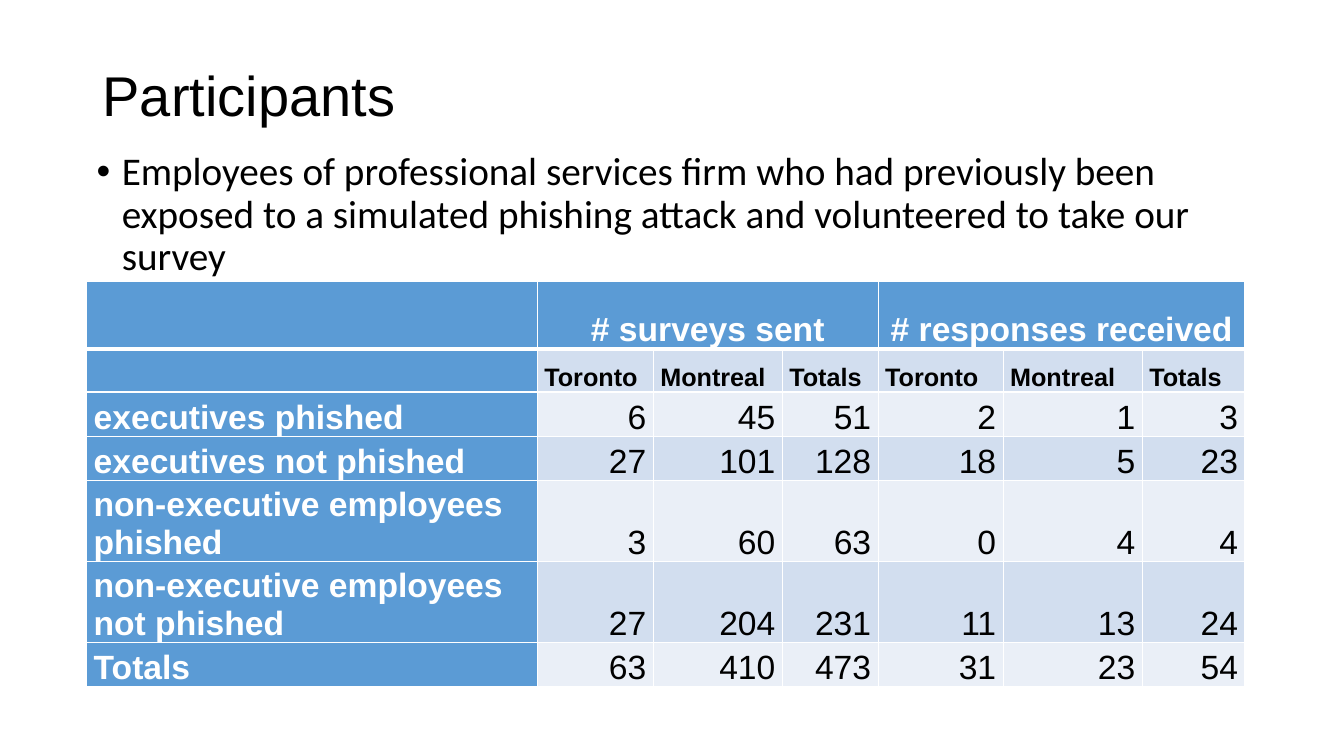
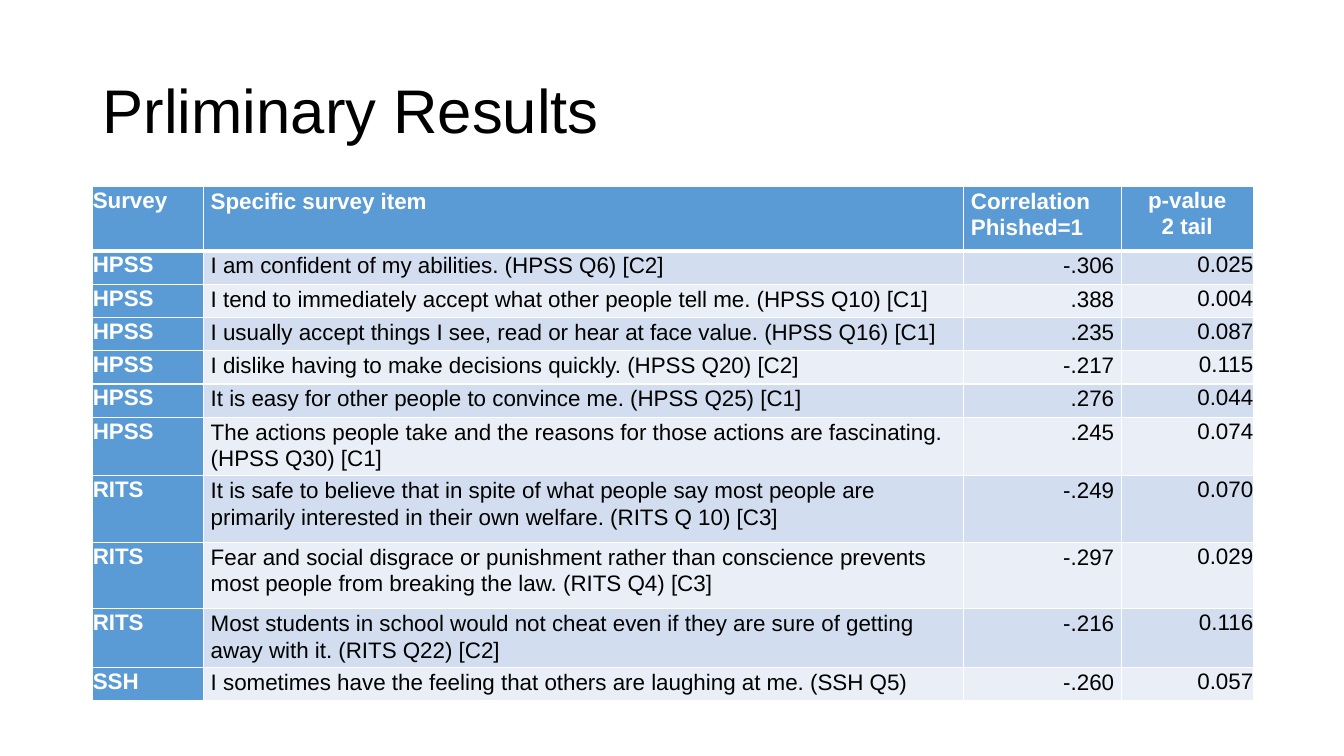
import copy
from dataclasses import dataclass
from typing import Optional

import pptx
import pptx.dml.color
import pptx.enum.text
import pptx.oxml
import pptx.oxml.ns
import pptx.util

Inches = pptx.util.Inches
Pt = pptx.util.Pt
ALIGN = pptx.enum.text.PP_ALIGN
ANCHOR = pptx.enum.text.MSO_ANCHOR


@dataclass(frozen=True)
class Theme:
    accent: str = "5B9BD5"
    band_dark: str = "D2DEEF"
    band_light: str = "EAEFF7"
    text: str = "000000"
    inverse: str = "FFFFFF"
    font: str = "Arial"
    body_font: str = "Calibri"
    body_size: int = 28
    border: int = 1
    header_border: int = 3


THEME = Theme()


@dataclass(frozen=True)
class Box:
    left: float
    top: float
    width: float
    height: float

    def lengths(self) -> tuple:
        return tuple(Inches(v) for v in (self.left, self.top, self.width, self.height))


@dataclass(frozen=True)
class TextStyle:
    size: int
    color: str = THEME.text
    bold: bool = False
    font: str = THEME.font
    align: Optional[ALIGN] = None
    spacing: Optional[float] = None
    before: Optional[int] = None
    after: Optional[int] = None


@dataclass(frozen=True)
class Column:
    width: float
    align: Optional[ALIGN] = ALIGN.RIGHT
    header_align: Optional[ALIGN] = None
    side_inset: float = 0.07
    top_inset: float = 0


@dataclass(frozen=True)
class TableStyle:
    size: int
    anchor: ANCHOR
    spacing: Optional[float] = None
    after: Optional[int] = None
    subheader_size: Optional[int] = None
    header_span: int = 1


def style_paragraph(p, text: str, style: TextStyle) -> None:
    p.text = text
    p.alignment = style.align
    p.line_spacing = style.spacing
    if style.before is not None:
        p.space_before = Pt(style.before)
    if style.after is not None:
        p.space_after = Pt(style.after)
    for r in p.runs:
        r.font.name = style.font
        r.font.size = Pt(style.size)
        r.font.bold = style.bold
        r.font.color.rgb = pptx.dml.color.RGBColor.from_string(style.color)
    for br in p._p.findall(pptx.oxml.ns.qn("a:br")):
        br.append(copy.deepcopy(p.runs[0]._r.rPr))


def add_text(slide, box: Box, text: str, style: TextStyle, anchor=ANCHOR.TOP):
    tf = slide.shapes.add_textbox(*box.lengths()).text_frame
    tf.word_wrap = True
    tf.vertical_anchor = anchor
    style_paragraph(tf.paragraphs[0], text, style)
    return tf.paragraphs[0]


def add_title(slide, text: str, height: float, size: int, spacing=None) -> None:
    style = TextStyle(size, spacing=spacing)
    add_text(slide, Box(0.92, 0.4, 11.5, height), text, style, ANCHOR.MIDDLE)


def add_bullet(slide, box: Box, text: str) -> None:
    style = TextStyle(THEME.body_size, font=THEME.body_font, spacing=0.9, before=10)
    pPr = add_text(slide, box, text, style)._p.get_or_add_pPr()
    pPr.set("marL", str(Inches(0.25)))
    pPr.set("indent", str(-Inches(0.25)))
    ns = pptx.oxml.ns.nsdecls("a")
    pPr.append(pptx.oxml.parse_xml(f'<a:buFont {ns} typeface="Arial"/>'))
    pPr.append(pptx.oxml.parse_xml(f'<a:buChar {ns} char="•"/>'))


def set_borders(cell, top: int, bottom: int) -> None:
    """Draw the cell's borders; call before filling, as the XML order matters."""
    tcPr = cell._tc.get_or_add_tcPr()
    widths = {"lnL": THEME.border, "lnR": THEME.border, "lnT": top, "lnB": bottom}
    for tag, width in widths.items():
        tcPr.append(pptx.oxml.parse_xml(
            f'<a:{tag} {pptx.oxml.ns.nsdecls("a")} w="{Pt(width)}"><a:solidFill>'
            f'<a:srgbClr val="{THEME.inverse}"/></a:solidFill></a:{tag}>'))


def cell_fill(row: int, col: int) -> str:
    if row == 0 or col == 0:
        return THEME.accent
    return THEME.band_dark if row % 2 else THEME.band_light


def cell_text_style(row: int, col: int, column: Column, style: TableStyle) -> TextStyle:
    subheader = row == 1 and style.subheader_size is not None
    size, align = style.size, column.align
    if row == 0:
        align = column.header_align
    elif subheader:
        size, align = style.subheader_size, None
    return TextStyle(
        size, THEME.inverse if row == 0 or col == 0 else THEME.text,
        bold=row == 0 or col == 0 or subheader, align=align,
        spacing=style.spacing, after=style.after)


def add_data_table(slide, box: Box, columns: list[Column], heights: list[float],
                   rows: list[tuple], style: TableStyle) -> None:
    table = slide.shapes.add_table(len(rows), len(columns), *box.lengths()).table
    table.first_row = table.horz_banding = False
    for c, column in enumerate(columns):
        table.columns[c].width = Inches(column.width)
    for r, (height, texts) in enumerate(zip(heights, rows)):
        table.rows[r].height = Inches(height)
        for c, (column, text) in enumerate(zip(columns, texts)):
            cell = table.cell(r, c)
            set_borders(cell, THEME.header_border if r == 1 else THEME.border,
                        THEME.header_border if r == 0 else THEME.border)
            cell.fill.solid()
            cell.fill.fore_color.rgb = pptx.dml.color.RGBColor.from_string(cell_fill(r, c))
            cell.margin_left = cell.margin_right = Inches(column.side_inset)
            cell.margin_top, cell.margin_bottom = Inches(column.top_inset), 0
            cell.vertical_anchor = style.anchor
            if text:
                style_paragraph(cell.text_frame.paragraphs[0], text,
                                cell_text_style(r, c, column, style))
    if style.header_span > 1:
        for c in range(1, len(columns), style.header_span):
            table.cell(0, c).merge(table.cell(0, c + style.header_span - 1))


def build_participants(slide) -> None:
    add_title(slide, "Participants", 1.06, 40)
    places = ("Toronto", "Montreal", "Totals")
    rows = [
        ("", "# surveys sent", "", "", "# responses received", "", ""),
        ("", *places, *places),
        ("executives phished", "6", "45", "51", "2", "1", "3"),
        ("executives not phished", "27", "101", "128", "18", "5", "23"),
        ("non-executive employees phished", "3", "60", "63", "0", "4", "4"),
        ("non-executive employees not phished", "27", "204", "231", "11", "13", "24"),
        ("Totals", "63", "410", "473", "31", "23", "54"),
    ]
    columns = [Column(4.47, align=None)] + [
        Column(w, header_align=ALIGN.CENTER) for w in (1.15, 1.28, 0.95, 1.24, 1.38, 1.02)]
    add_data_table(slide, Box(0.86, 2.79, 11.5, 4.03), columns,
                   [0.67, 0.43, 0.44, 0.44, 0.67, 0.67, 0.44], rows,
                   TableStyle(24, ANCHOR.BOTTOM, subheader_size=18, header_span=3))
    add_bullet(slide, Box(0.86, 1.46, 11.5, 4.76),
               "Employees of professional services firm who had previously been exposed "
               "to a simulated phishing attack and volunteered to take our survey")


def build_results(slide) -> None:
    add_title(slide, "Prliminary Results", 1.45, 44, spacing=0.9)
    rows = [
        ("Survey", "Specific survey item", "Correlation\nPhished=1", "p-value\n2 tail"),
        ("HPSS", "I am confident of my abilities. (HPSS Q6) [C2]", "-.306", "0.025"),
        ("HPSS", "I tend to immediately accept what other people tell me. (HPSS Q10) [C1]",
         ".388", "0.004"),
        ("HPSS", "I usually accept things I see, read or hear at face value. (HPSS Q16) [C1]",
         ".235", "0.087"),
        ("HPSS", "I dislike having to make decisions quickly. (HPSS Q20) [C2]",
         "-.217", "0.115"),
        ("HPSS", "It is easy for other people to convince me. (HPSS Q25) [C1]",
         ".276", "0.044"),
        ("HPSS", "The actions people take and the reasons for those actions are "
         "fascinating. (HPSS Q30) [C1]", ".245", "0.074"),
        ("RITS", "It is safe to believe that in spite of what people say most people are "
         "primarily interested in their own welfare. (RITS Q 10) [C3]", "-.249", "0.070"),
        ("RITS", "Fear and social disgrace or punishment rather than conscience prevents "
         "most people from breaking the law. (RITS Q4) [C3]", "-.297", "0.029"),
        ("RITS", "Most students in school would not cheat even if they are sure of getting "
         "away with it. (RITS Q22) [C2]", "-.216", "0.116"),
        ("SSH", "I sometimes have the feeling that others are laughing at me. (SSH Q5)",
         "-.260", "0.057"),
    ]
    columns = [
        Column(1.1, align=None, side_inset=0),
        Column(7.54, align=None, top_inset=0.01),
        Column(1.56, top_inset=0.01),
        Column(1.31, header_align=ALIGN.CENTER, side_inset=0),
    ]
    heights = [0.64] + [0.33] * 6 + [0.66] * 2 + [0.33] * 2
    add_data_table(slide, Box(0.92, 1.85, 11.5, 5.09), columns, heights, rows,
                   TableStyle(16, ANCHOR.TOP, spacing=1.07, after=8))


def main() -> None:
    prs = pptx.Presentation()
    prs.slide_width, prs.slide_height = Inches(13.33), Inches(7.5)
    for build in (build_participants, build_results):
        build(prs.slides.add_slide(prs.slide_layouts[6]))
    prs.save("out.pptx")


if __name__ == "__main__":
    main()
